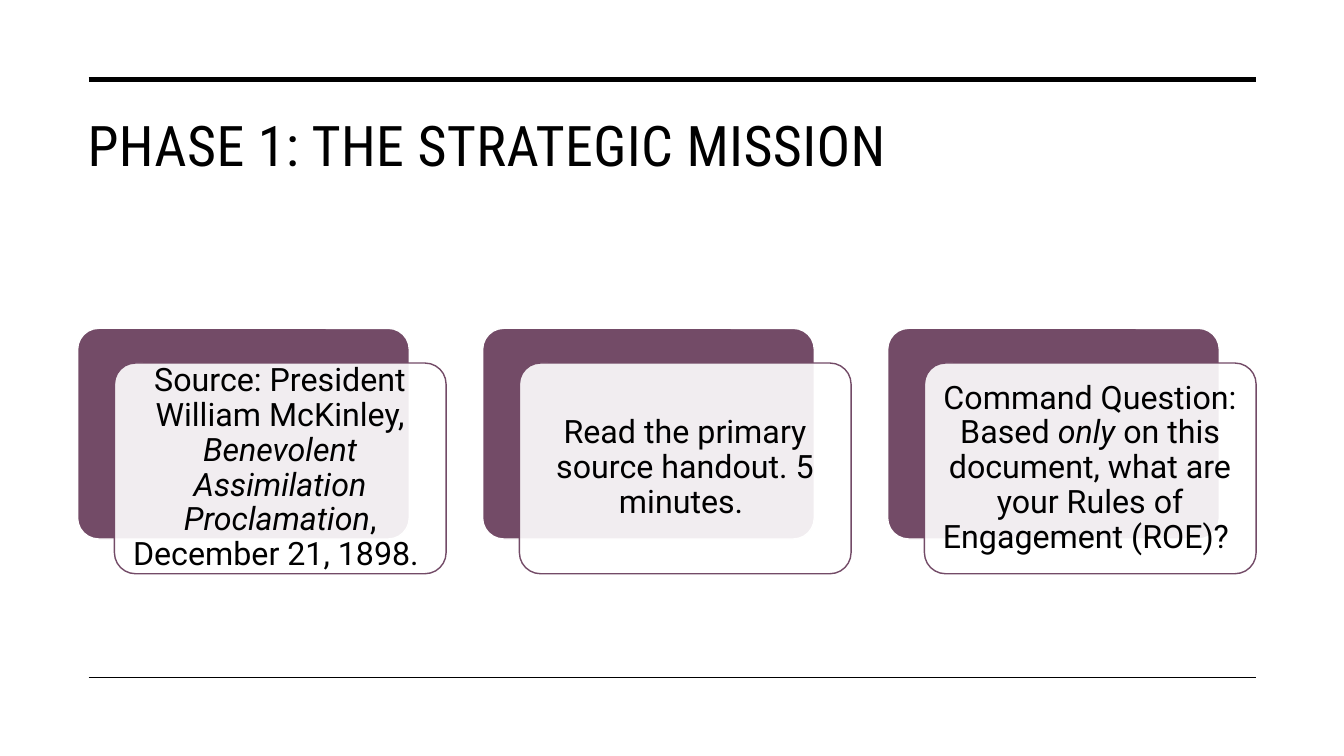
from dataclasses import dataclass

import pptx
import pptx.dml.color
import pptx.enum.shapes
import pptx.enum.text
import pptx.util
from lxml import etree
from pptx.oxml.ns import qn

Pt = pptx.util.Pt
BLACK, WHITE, PLUM = "000000", "FFFFFF", "734B67"

CARD_LEFT, CARD_TOP = 55.44, 234.5
CARD_WIDTH, CARD_HEIGHT = 236.88, 150.48
CARD_PITCH = 289.3
FRONT_SHIFT_X, FRONT_SHIFT_Y = 26.3, 24.8
TEXT_MARGIN = 4.35


@dataclass
class TextPart:
    text: str
    italic: bool = False


@dataclass
class Rule:
    top: float
    weight: float


RULES = [Rule(56.88, 3.5), Rule(483.84, 1)]

CARDS = [
    [
        TextPart("Source: President William McKinley, "),
        TextPart("Benevolent Assimilation Proclamation", italic=True),
        TextPart(", December 21, 1898. "),
    ],
    [TextPart("Read the primary source handout. 5 minutes. ")],
    [
        TextPart("Command Question: Based "),
        TextPart("only ", italic=True),
        TextPart("on this document, what are your Rules of Engagement (ROE)? "),
    ],
]


def color(value: str) -> pptx.dml.color.RGBColor:
    return pptx.dml.color.RGBColor.from_string(value)


def add_rule(slide, rule: Rule) -> None:
    connector = slide.shapes.add_connector(
        pptx.enum.shapes.MSO_CONNECTOR.STRAIGHT,
        Pt(63.36), Pt(rule.top), Pt(897.12), Pt(rule.top),
    )
    connector.line.color.rgb = color(BLACK)
    connector.line.width = Pt(rule.weight)
    etree.SubElement(connector._element.spPr, qn("a:effectLst"))


def add_panel(slide, left: float, top: float, fill: str, line: str, opacity: int = 100) -> None:
    shape = slide.shapes.add_shape(
        pptx.enum.shapes.MSO_SHAPE.ROUNDED_RECTANGLE,
        Pt(left), Pt(top), Pt(CARD_WIDTH), Pt(CARD_HEIGHT),
    )
    shape.adjustments[0] = 0.1
    shape.shadow.inherit = False
    shape.fill.solid()
    shape.fill.fore_color.rgb = color(fill)
    shape.line.color.rgb = color(line)
    shape.line.width = Pt(1)
    if opacity < 100:
        fill_color = shape._element.spPr.find(qn("a:solidFill"))[0]
        etree.SubElement(fill_color, qn("a:alpha"), val=str(opacity * 1000))


def add_text(slide, left: float, top: float, width: float, height: float,
             parts: list[TextPart], font_name: str, size: float):
    """Add a one-paragraph text box and return its text frame."""
    frame = slide.shapes.add_textbox(Pt(left), Pt(top), Pt(width), Pt(height)).text_frame
    frame.word_wrap = True
    frame.margin_left = frame.margin_right = Pt(7.2)
    frame.margin_top = frame.margin_bottom = Pt(7.2)
    paragraph = frame.paragraphs[0]
    paragraph.font.name = font_name
    paragraph.font.size = Pt(size)
    paragraph.font.color.rgb = color(BLACK)
    for part in parts:
        run = paragraph.add_run()
        run.text = part.text
        if part.italic:
            run.font.italic = True
    return frame


def add_card(slide, left: float, parts: list[TextPart]) -> None:
    front_left, front_top = left + FRONT_SHIFT_X, CARD_TOP + FRONT_SHIFT_Y
    add_panel(slide, left, CARD_TOP, PLUM, WHITE)
    add_panel(slide, front_left, front_top, WHITE, PLUM, opacity=90)
    frame = add_text(
        slide, front_left + TEXT_MARGIN, front_top + TEXT_MARGIN,
        CARD_WIDTH - 2 * TEXT_MARGIN, CARD_HEIGHT - 2 * TEXT_MARGIN,
        parts, "Roboto", 23,
    )
    frame.vertical_anchor = pptx.enum.text.MSO_ANCHOR.MIDDLE
    frame.paragraphs[0].alignment = pptx.enum.text.PP_ALIGN.CENTER
    frame.paragraphs[0].line_spacing = 0.9


def main() -> None:
    presentation = pptx.Presentation()
    presentation.slide_width, presentation.slide_height = Pt(960), Pt(540)
    slide = presentation.slides.add_slide(presentation.slide_layouts[6])

    # Rules above and below the content
    for rule in RULES:
        add_rule(slide, rule)

    # Title, slightly letter-spaced
    title = add_text(slide, 55.44, 72, 841.68, 102.96,
                     [TextPart("PHASE 1: THE STRATEGIC MISSION")], "Roboto Condensed", 40)
    title.paragraphs[0].runs[0].font._element.set("spc", "30")

    # Row of layered cards
    for index, parts in enumerate(CARDS):
        add_card(slide, CARD_LEFT + index * CARD_PITCH, parts)

    presentation.save("out.pptx")


if __name__ == "__main__":
    main()
